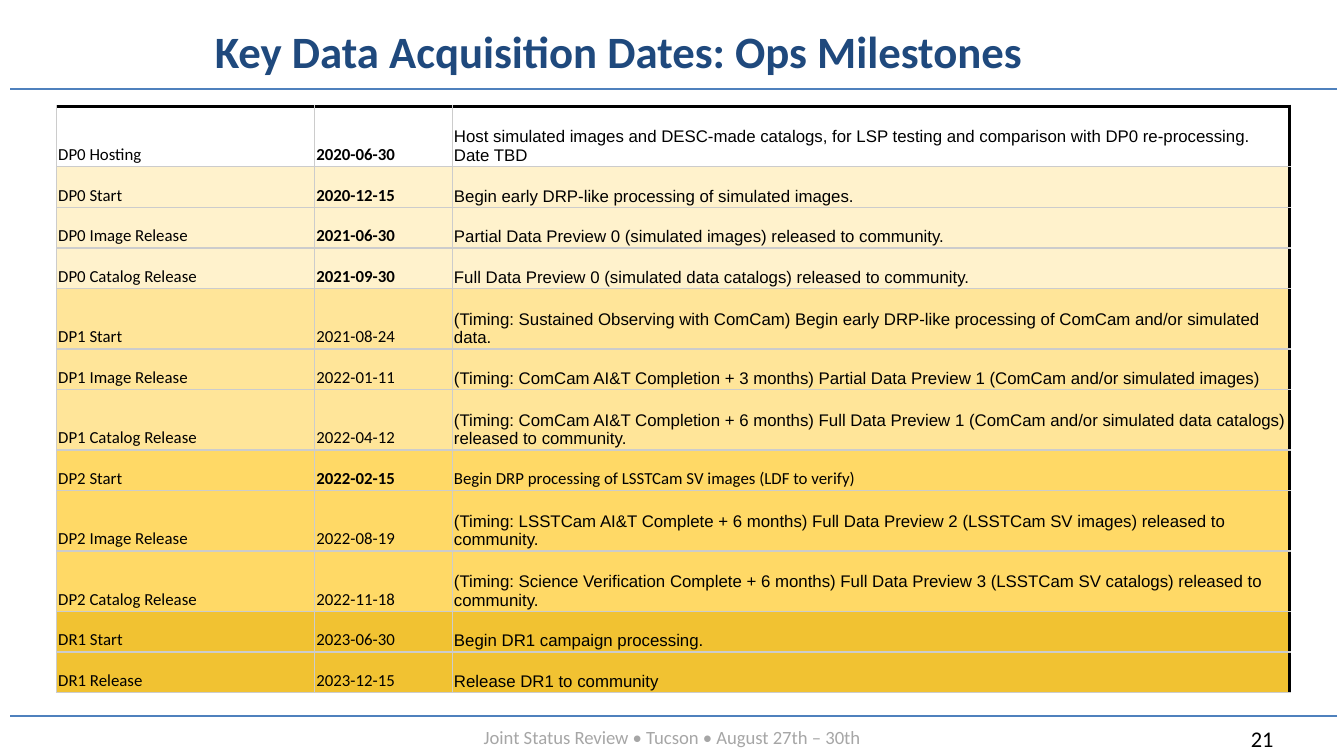
from dataclasses import dataclass

from lxml import etree
from pptx import Presentation
from pptx.dml.color import RGBColor
from pptx.enum.shapes import MSO_CONNECTOR
from pptx.enum.text import MSO_ANCHOR, PP_ALIGN
from pptx.oxml.ns import qn
from pptx.util import Cm, Pt

STRAIGHT = MSO_CONNECTOR.STRAIGHT
LEFT, CENTER = PP_ALIGN.LEFT, PP_ALIGN.CENTER
TOP, MIDDLE, BOTTOM = MSO_ANCHOR.TOP, MSO_ANCHOR.MIDDLE, MSO_ANCHOR.BOTTOM


@dataclass(frozen=True)
class Theme:
    heading_font: str = "Calibri"
    detail_font: str = "Arial"
    title_color: str = "1F497D"
    rule_color: str = "4F81BD"
    text_color: str = "000000"
    footer_color: str = "A6A6A6"
    grid_color: str = "CCCCCC"
    frame_color: str = "000000"
    title_size: float = 24
    number_size: float = 12
    footer_size: float = 10
    table_size: float = 9
    rule_width: float = 1
    grid_width: float = 0.75
    frame_width: float = 2.25


class SlideBuilder:
    def __init__(self, slide, theme):
        self.slide = slide
        self.theme = theme

    def add_run(self, paragraph, text, size, color, font=None, bold=False):
        run = paragraph.add_run()
        run.text = text
        run.font.name = font or self.theme.heading_font
        run.font.size = Pt(size)
        run.font.bold = bold
        run.font.color.rgb = RGBColor.from_string(color)

    def text(self, box, text, size, color, bold=False, align=LEFT, anchor=TOP):
        shape = self.slide.shapes.add_textbox(*(Cm(length) for length in box))
        frame = shape.text_frame
        frame.word_wrap = True
        frame.vertical_anchor = anchor
        paragraph = frame.paragraphs[0]
        paragraph.alignment = align
        self.add_run(paragraph, text, size, color, bold=bold)

    def rule(self, left, right, y):
        line = self.slide.shapes.add_connector(STRAIGHT, Cm(right), Cm(y), Cm(left), Cm(y))
        line.line.color.rgb = RGBColor.from_string(self.theme.rule_color)
        line.line.width = Pt(self.theme.rule_width)
        etree.SubElement(line._element.spPr, qn("a:effectLst"))

    def cell_borders(self, cell, framed_sides):
        properties = cell._tc.get_or_add_tcPr()
        for index, side in enumerate("LRTB"):
            framed = side in framed_sides
            color = self.theme.frame_color if framed else self.theme.grid_color
            width = self.theme.frame_width if framed else self.theme.grid_width
            border = etree.Element(qn(f"a:ln{side}"), w=str(Pt(width)))
            fill = etree.SubElement(border, qn("a:solidFill"))
            etree.SubElement(fill, qn("a:srgbClr"), val=color)
            properties.insert(index, border)

    def cell(self, cell, text, fill, font, bold, framed_sides):
        cell.fill.solid()
        cell.fill.fore_color.rgb = RGBColor.from_string(fill)
        cell.vertical_anchor = BOTTOM
        cell.margin_left = cell.margin_right = Cm(0.03)
        cell.margin_top = cell.margin_bottom = Cm(0.03)
        self.add_run(cell.text_frame.paragraphs[0], text, self.theme.table_size,
                     self.theme.text_color, font, bold)
        self.cell_borders(cell, framed_sides)

    def milestone_table(self, left, top, column_widths, row_heights, milestones):
        table = self.slide.shapes.add_table(
            len(milestones), len(column_widths), Cm(left), Cm(top),
            Cm(sum(column_widths)), Cm(sum(row_heights))).table
        table.first_row = table.horz_banding = False
        for column, width in zip(table.columns, column_widths):
            column.width = Cm(width)
        for row, height in zip(table.rows, row_heights):
            row.height = Cm(height)
        last_column = len(column_widths) - 1
        for row_index, (name, date, detail) in enumerate(milestones):
            fill = PHASE_FILLS.get(name, PHASE_FILLS[name[:3]])
            detail_font = (self.theme.heading_font if name in HEADING_FONT_DETAILS
                           else self.theme.detail_font)
            fonts = (self.theme.heading_font, self.theme.heading_font, detail_font)
            for column_index, text in enumerate((name, date, detail)):
                framed = ("T" if row_index == 0 else "") + (
                    "R" if column_index == last_column else "")
                bold = column_index == 1 and date in BOLD_DATES
                self.cell(table.cell(row_index, column_index), text, fill,
                          fonts[column_index], bold, framed)


# Milestones: name, date, detail
MILESTONES = [
    ("DP0 Hosting", "2020-06-30",
     "Host simulated images and DESC-made catalogs, for LSP testing and comparison "
     "with DP0 re-processing. Date TBD"),
    ("DP0 Start", "2020-12-15", "Begin early DRP-like processing of simulated images."),
    ("DP0 Image Release", "2021-06-30",
     "Partial Data Preview 0 (simulated images) released to community."),
    ("DP0 Catalog Release", "2021-09-30",
     "Full Data Preview 0 (simulated data catalogs) released to community."),
    ("DP1 Start", "2021-08-24",
     "(Timing: Sustained Observing with ComCam) Begin early DRP-like processing of "
     "ComCam and/or simulated data."),
    ("DP1 Image Release", "2022-01-11",
     "(Timing: ComCam AI&T Completion + 3 months) Partial Data Preview 1 "
     "(ComCam and/or simulated images)"),
    ("DP1 Catalog Release", "2022-04-12",
     "(Timing: ComCam AI&T Completion + 6 months) Full Data Preview 1 "
     "(ComCam and/or simulated data catalogs) released to community."),
    ("DP2 Start", "2022-02-15", "Begin DRP processing of LSSTCam SV images (LDF to verify)"),
    ("DP2 Image Release", "2022-08-19",
     "(Timing: LSSTCam AI&T Complete + 6 months) Full Data Preview 2 "
     "(LSSTCam SV images) released to community."),
    ("DP2 Catalog Release", "2022-11-18",
     "(Timing: Science Verification Complete + 6 months) Full Data Preview 3 "
     "(LSSTCam SV catalogs) released to community."),
    ("DR1 Start", "2023-06-30", "Begin DR1 campaign processing."),
    ("DR1 Release", "2023-12-15", "Release DR1 to community"),
]
PHASE_FILLS = {"DP0 Hosting": "FFFFFF", "DP0": "FFF2CC", "DP1": "FFE599",
               "DP2": "FFD966", "DR1": "F1C232"}
BOLD_DATES = {"2020-06-30", "2020-12-15", "2021-06-30", "2021-09-30", "2022-02-15"}
HEADING_FONT_DETAILS = {"DP2 Start"}
TWO_LINE_ROWS = {0, 4, 6, 8, 9}


def main():
    presentation = Presentation()
    presentation.slide_width, presentation.slide_height = Cm(25.4), Cm(14.29)
    theme = Theme()
    builder = SlideBuilder(presentation.slides.add_slide(presentation.slide_layouts[6]), theme)

    # Footer
    builder.rule(0.18, 25.27, 13.54)
    builder.text((23.39, 13.59, 1.57, 0.76), "21", theme.number_size, theme.text_color)
    builder.text((1.27, 13.59, 22.86, 0.69), "Joint Status Review • Tucson • August 27th – 30th",
                 theme.footer_size, theme.footer_color, align=CENTER)

    # Title
    builder.rule(0.18, 25.27, 1.68)
    builder.text((3.81, 0.38, 16.71, 1.17), "Key Data Acquisition Dates: Ops Milestones",
                 theme.title_size, theme.title_color, bold=True, anchor=MIDDLE)

    # Milestone table
    row_heights = [1.14 if index in TWO_LINE_ROWS else 0.77 for index in range(len(MILESTONES))]
    builder.milestone_table(1.07, 2.01, (4.88, 2.6, 15.82), row_heights, MILESTONES)

    presentation.save("out.pptx")


if __name__ == "__main__":
    main()
